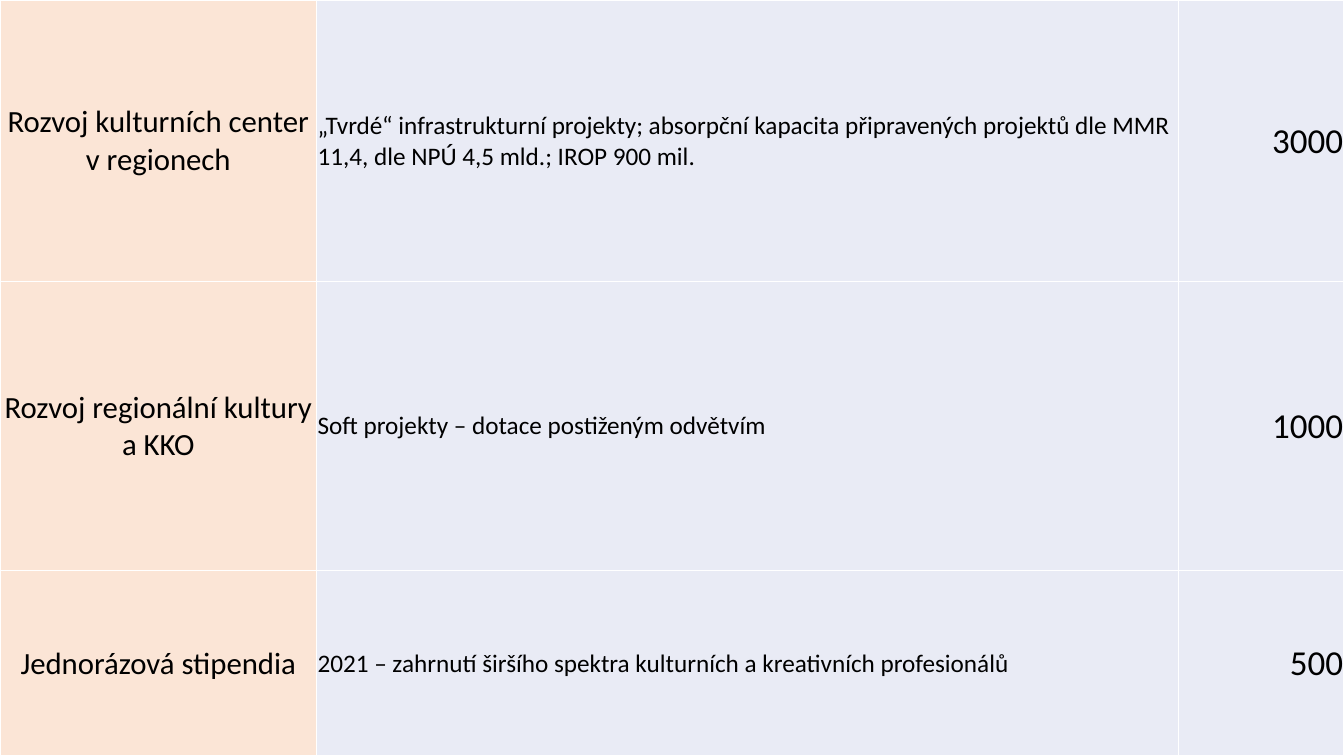
from dataclasses import dataclass

import lxml.etree
import pptx
import pptx.dml.color
import pptx.enum.text
import pptx.oxml.ns
import pptx.table
import pptx.util

ALIGN = pptx.enum.text.PP_ALIGN


@dataclass(frozen=True)
class Theme:
    font: str = "Calibri"
    text: str = "000000"
    border: str = "FFFFFF"
    programme_fill: str = "FBE5D6"
    detail_fill: str = "E9EBF5"
    programme_size: int = 22
    description_size: int = 18
    amount_size: int = 25
    border_width: int = 1


@dataclass(frozen=True)
class Column:
    share: float
    size: int
    fill: str
    alignment: ALIGN


@dataclass(frozen=True)
class Programme:
    share: float
    name: str
    description: str
    amount: str


THEME = Theme()
SLIDE_WIDTH = pptx.util.Inches(13.33)
SLIDE_HEIGHT = pptx.util.Inches(7.5)
CELL_MARGIN = pptx.util.Inches(0.01)

COLUMNS = [
    Column(3.14 / 13.33, THEME.programme_size, THEME.programme_fill, ALIGN.CENTER),
    Column(8.55 / 13.33, THEME.description_size, THEME.detail_fill, ALIGN.LEFT),
    Column(1.64 / 13.33, THEME.amount_size, THEME.detail_fill, ALIGN.RIGHT),
]

PROGRAMMES = [
    Programme(
        2.79 / 7.5,
        "Rozvoj kulturních center v regionech",
        "„Tvrdé“ infrastrukturní projekty; absorpční kapacita připravených projektů "
        "dle MMR 11,4, dle NPÚ 4,5 mld.; IROP 900 mil.",
        "3000",
    ),
    Programme(
        2.87 / 7.5,
        "Rozvoj regionální kultury a KKO",
        "Soft projekty – dotace postiženým odvětvím",
        "1000",
    ),
    Programme(
        1.84 / 7.5,
        "Jednorázová stipendia",
        "2021 – zahrnutí širšího spektra kulturních a kreativních profesionálů",
        "500",
    ),
]


def color(value: str) -> pptx.dml.color.RGBColor:
    return pptx.dml.color.RGBColor.from_string(value)


def add_borders(cell: pptx.table._Cell) -> None:
    properties = cell._tc.get_or_add_tcPr()
    qualified = pptx.oxml.ns.qn
    for position, side in enumerate(("a:lnL", "a:lnR", "a:lnT", "a:lnB")):
        line = lxml.etree.Element(
            qualified(side), w=str(pptx.util.Pt(THEME.border_width))
        )
        fill = lxml.etree.SubElement(line, qualified("a:solidFill"))
        lxml.etree.SubElement(fill, qualified("a:srgbClr"), val=THEME.border)
        properties.insert(position, line)


def fill_cell(cell: pptx.table._Cell, text: str, column: Column) -> None:
    cell.text = text
    cell.vertical_anchor = pptx.enum.text.MSO_ANCHOR.MIDDLE
    cell.margin_left = cell.margin_right = cell.margin_top = CELL_MARGIN
    cell.margin_bottom = 0
    cell.fill.solid()
    cell.fill.fore_color.rgb = color(column.fill)
    paragraph = cell.text_frame.paragraphs[0]
    paragraph.alignment = column.alignment
    paragraph.font.name = THEME.font
    paragraph.font.size = pptx.util.Pt(column.size)
    paragraph.font.bold = False
    paragraph.font.color.rgb = color(THEME.text)
    add_borders(cell)


def main() -> None:
    presentation = pptx.Presentation()
    presentation.slide_width = SLIDE_WIDTH
    presentation.slide_height = SLIDE_HEIGHT
    slide = presentation.slides.add_slide(presentation.slide_layouts[6])
    table = slide.shapes.add_table(
        len(PROGRAMMES), len(COLUMNS), 0, 0, SLIDE_WIDTH, SLIDE_HEIGHT
    ).table
    table.first_row = False
    table.horz_banding = False
    for index, column in enumerate(COLUMNS):
        table.columns[index].width = round(SLIDE_WIDTH * column.share)
    for row, programme in enumerate(PROGRAMMES):
        table.rows[row].height = round(SLIDE_HEIGHT * programme.share)
        texts = (programme.name, programme.description, programme.amount)
        for index, (text, column) in enumerate(zip(texts, COLUMNS)):
            fill_cell(table.cell(row, index), text, column)
    presentation.save("out.pptx")


if __name__ == "__main__":
    main()
